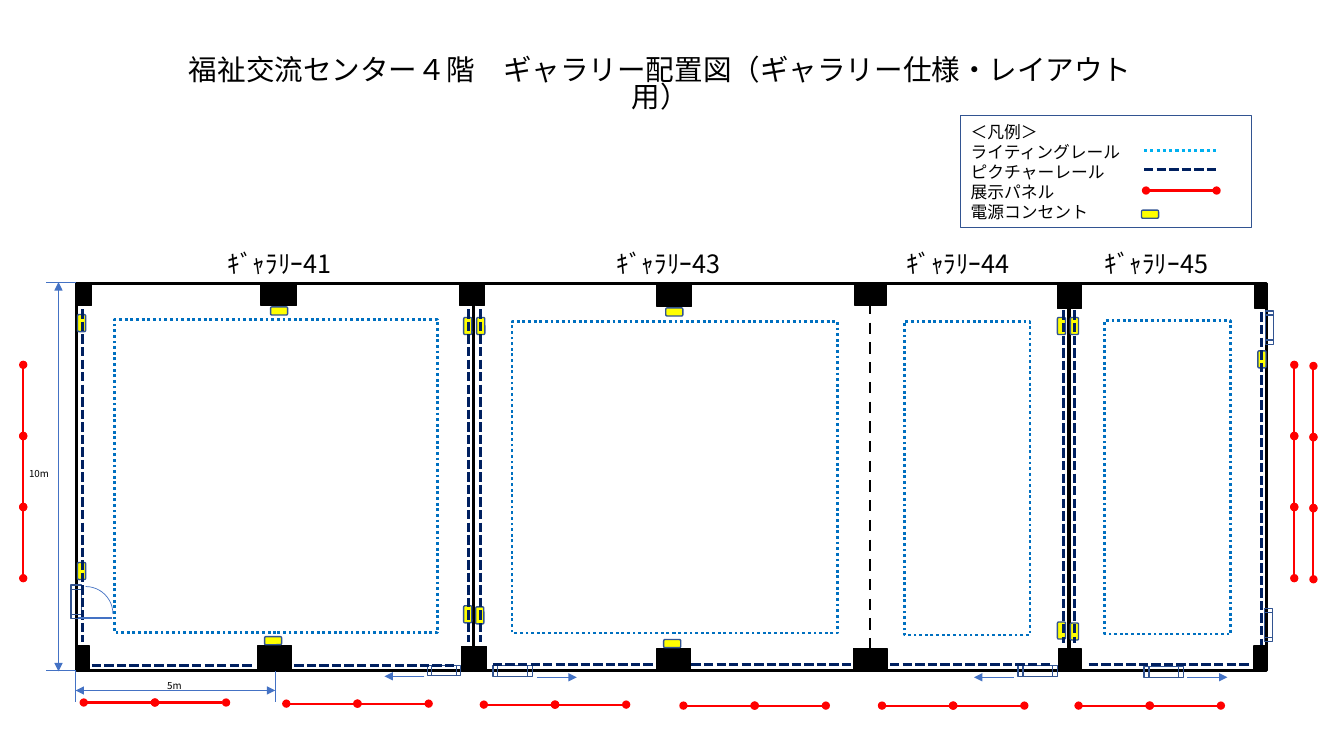
from lxml import etree
from pptx import Presentation
from pptx.dml.color import RGBColor
from pptx.enum.dml import MSO_LINE
from pptx.enum.shapes import MSO_CONNECTOR, MSO_SHAPE
from pptx.enum.text import MSO_ANCHOR, PP_ALIGN
from pptx.oxml.ns import qn
from pptx.util import Pt

RECTANGLE, ROUNDED = MSO_SHAPE.RECTANGLE, MSO_SHAPE.ROUNDED_RECTANGLE
WINDOW, ARC = MSO_SHAPE.FLOWCHART_PREDEFINED_PROCESS, MSO_SHAPE.ARC
STRAIGHT = MSO_CONNECTOR.STRAIGHT
DASH, SHORT_DASH, DOTS = MSO_LINE.DASH, MSO_LINE.SQUARE_DOT, MSO_LINE.ROUND_DOT
LEFT, CENTER = PP_ALIGN.LEFT, PP_ALIGN.CENTER
TOP, MIDDLE = MSO_ANCHOR.TOP, MSO_ANCHOR.MIDDLE

FONT = "Noto Sans CJK JP"
BLACK, WHITE, YELLOW, RED = "000000", "FFFFFF", "FFFF00", "FF0000"
OUTLINE, DIMENSION, NAVY = "325491", "4472C4", "002060"
ZONE_BLUE, LEGEND_BLUE = "0070C0", "00B0F0"

ROOM_TOP, ROOM_HEIGHT = 202.3, 276.5
ROOM_BOTTOM = ROOM_TOP + ROOM_HEIGHT
PILLAR_TOP = 203
OUTLET_LONG, OUTLET_SHORT = 12.2, 5.8
PANEL_LENGTH, PANEL_STEP = 51, 50.7
RAIL_ACROSS, RAIL_DOWN = 115.6, 237.6
SLIDE_ARROW = 28.5

# Room left, width
ROOMS = [(54.7, 283.7), (338.4, 425.5), (763.2, 141.8)]
ROOM_LABELS = [(155.5, "ｷﾞｬﾗﾘｰ41"), (433.4, "ｷﾞｬﾗﾘｰ43"),
               (640.1, "ｷﾞｬﾗﾘｰ44"), (781.9, "ｷﾞｬﾗﾘｰ45")]
# Lighting rail left, top, width, height
LIGHTING = [(82.1, 228.2, 230.4, 223.9), (365.8, 229.7, 232.6, 222.5),
            (645.8, 229.7, 90, 223.9), (789.1, 229, 90, 223.9)]
# Pillar left, width, height
TOP_PILLARS = [(55.4, 10.1, 15.1), (186.5, 25.2, 15.1), (328.3, 10.1, 15.1),
               (339.8, 6.5, 15.1), (469.4, 24.5, 15.8), (610.6, 22.3, 15.1),
               (755.3, 7.2, 17.3), (763.9, 8.6, 17.3), (896.4, 8.6, 17.3)]
BOTTOM_PILLARS = [(55.4, 8.6, 17.3), (184.3, 23.8, 17.6), (329.8, 8.6, 17),
                  (339.1, 8.6, 17), (469.4, 23.8, 15.8), (609.8, 23.8, 15.5),
                  (756, 5.8, 15.1), (761, 11.5, 15.1), (895.7, 8.6, 17.3)]
# Outlet centres
UPRIGHT_OUTLETS = [(58.3, 230.8), (58.3, 407.9), (334.1, 232.9), (334.1, 438.8),
                   (343.4, 232.9), (342.7, 439.6), (758.2, 232.9), (758.2, 450.4),
                   (767.5, 232.9), (767.5, 451.1), (901.4, 256.7)]
FLAT_OUTLETS = [(199.4, 222.1), (195.1, 457.6), (481.7, 222.8), (480.2, 459.7),
                (821.5, 153)]
# Picture rail starts
RAILS_ACROSS = [(65.5, 475.2), (210.2, 475.2), (352.1, 474.8), (493.9, 474.8),
                (635.8, 474.8), (777.6, 474.8)]
RAILS_DOWN = [(59, 221), (334.8, 221), (343.4, 221), (759.6, 221.8),
              (767.5, 221.8), (901.4, 223.2)]
# Display panel starts
PANELS_ACROSS = [(59.8, 501.8), (204.5, 502.6), (345.6, 503.3), (488.2, 504),
                 (630, 504), (770.4, 504)]
PANELS_DOWN = [(16.6, 260.6), (924.5, 260.6), (938.2, 261.4)]
# Window left, top, width, height, rotation
WINDOWS = [(305.3, 475.2, 23.8, 7.2, 0), (352.1, 475.2, 28.1, 7.9, 0),
           (727.2, 475.2, 28.1, 7.9, 0), (817.2, 475.9, 28.1, 7.9, 180),
           (42.5, 426.2, 23.8, 7.2, 90), (894.2, 443.5, 23.8, 5.8, 90),
           (895, 231.1, 23.8, 5.8, 90)]
# Sliding arrow start, height, direction
SLIDE_ARROWS = [(303.1, 483.1, -1), (383.5, 483.8, 1), (724.3, 483.8, -1),
                (848.2, 483.8, 1)]
LEGEND = ["＜凡例＞", "ライティングレール", "ピクチャーレール", "展示パネル", "電源コンセント"]


def color(value):
    return RGBColor.from_string(value)


def add_block(slide, kind, left, top, width, height, line, weight, fill=None, dash=None):
    shape = slide.shapes.add_shape(kind, Pt(left), Pt(top), Pt(width), Pt(height))
    shape.shadow.inherit = False
    if fill:
        shape.fill.solid()
        shape.fill.fore_color.rgb = color(fill)
    else:
        shape.fill.background()
    style_line(shape.line, line, weight, dash)
    return shape


def style_line(line, value, weight, dash):
    line.color.rgb = color(value)
    line.width = Pt(weight)
    if dash:
        line.dash_style = dash


def add_line(slide, x1, y1, x2, y2, value, weight, dash=None, head=None, tail=None):
    connector = slide.shapes.add_connector(STRAIGHT, Pt(x1), Pt(y1), Pt(x2), Pt(y2))
    style_line(connector.line, value, weight, dash)
    properties = connector._element.spPr
    outline = properties.find(qn("a:ln"))
    for tag, end in (("a:headEnd", head), ("a:tailEnd", tail)):
        if end:
            etree.SubElement(outline, qn(tag), type=end)
    etree.SubElement(properties, qn("a:effectLst"))


def write_text(shape, lines, size, align=LEFT, anchor=TOP):
    frame = shape.text_frame
    frame.word_wrap = True
    frame.vertical_anchor = anchor
    frame.text = "\n".join(lines)
    for paragraph in frame.paragraphs:
        paragraph.alignment = align
        font = paragraph.font
        font.size, font.name = Pt(size), FONT
        font.color.rgb = color(BLACK)
        defaults = paragraph._p.get_or_add_pPr().get_or_add_defRPr()
        etree.SubElement(defaults, qn("a:ea"), typeface=FONT)
    return frame.paragraphs[0]


def add_label(slide, left, top, width, height, text, size, align=LEFT):
    box = slide.shapes.add_textbox(Pt(left), Pt(top), Pt(width), Pt(height))
    return write_text(box, [text], size, align)


def add_outlet(slide, x, y, width, height):
    add_block(slide, ROUNDED, x - width / 2, y - height / 2, width, height,
              OUTLINE, 1, YELLOW)


def add_panels(slide, x, y, count, across, down):
    for index in range(count):
        left, top = x + index * PANEL_STEP * across, y + index * PANEL_STEP * down
        add_line(slide, left, top, left + PANEL_LENGTH * across,
                 top + PANEL_LENGTH * down, RED, 1.5, head="oval", tail="oval")


def add_dimension(slide, x1, y1, x2, y2, ends=None):
    add_line(slide, x1, y1, x2, y2, DIMENSION, 0.5, head=ends, tail=ends)


def add_legend(slide):
    box = add_block(slide, RECTANGLE, 686.2, 82.8, 207.4, 79.9, OUTLINE, 0.75)
    write_text(box, LEGEND, 12, anchor=MIDDLE)
    add_line(slide, 817.2, 107.3, 869, 107.3, LEGEND_BLUE, 2.25, DOTS)
    add_line(slide, 817.2, 121, 869, 121, NAVY, 2.25, SHORT_DASH)
    add_line(slide, 818.6, 136.1, 869, 136.1, RED, 1.5, head="oval", tail="oval")


def main():
    presentation = Presentation()
    presentation.slide_width, presentation.slide_height = Pt(960), Pt(540)
    slide = presentation.slides.add_slide(presentation.slide_layouts[6])

    # Title
    title = add_label(slide, 111.6, 38.2, 720, 32.4,
                      "福祉交流センター４階　ギャラリー配置図（ギャラリー仕様・レイアウト用）", 20.4, CENTER)
    title.line_spacing, title.space_before = 0.8, Pt(10)

    # Rooms and lighting rails
    for zone in LIGHTING:
        add_block(slide, RECTANGLE, *zone, ZONE_BLUE, 2, WHITE, DOTS)
    for left, width in ROOMS:
        add_block(slide, RECTANGLE, left, ROOM_TOP, width, ROOM_HEIGHT, BLACK, 2)
    add_line(slide, 621.4, ROOM_TOP, 621.4, ROOM_BOTTOM, BLACK, 2, DASH)
    for left, text in ROOM_LABELS:
        add_label(slide, left, 173.5, 104.4, 28.8, text, 18)

    # Pillars and windows
    for left, width, height in TOP_PILLARS:
        add_block(slide, RECTANGLE, left, PILLAR_TOP, width, height, BLACK, 1, BLACK)
    for left, width, height in BOTTOM_PILLARS:
        add_block(slide, RECTANGLE, left, ROOM_BOTTOM - height, width, height,
                  BLACK, 1, BLACK)
    for left, top, width, height, rotation in WINDOWS:
        window = add_block(slide, WINDOW, left, top, width, height, OUTLINE, 1)
        window.rotation = rotation

    # Legend, outlets and picture rails
    add_legend(slide)
    for x, y in UPRIGHT_OUTLETS:
        add_outlet(slide, x, y, OUTLET_SHORT, OUTLET_LONG)
    for x, y in FLAT_OUTLETS:
        add_outlet(slide, x, y, OUTLET_LONG, OUTLET_SHORT)
    for x, y in RAILS_ACROSS:
        add_line(slide, x, y, x + RAIL_ACROSS, y, NAVY, 2.25, SHORT_DASH)
    for x, y in RAILS_DOWN:
        add_line(slide, x, y, x, y + RAIL_DOWN, NAVY, 2.25, SHORT_DASH)

    # Display panels
    for x, y in PANELS_ACROSS:
        add_panels(slide, x, y, 2, 1, 0)
    for x, y in PANELS_DOWN:
        add_panels(slide, x, y, 3, 0, 1)

    # Doors
    for x, y, direction in SLIDE_ARROWS:
        add_line(slide, x, y, x + SLIDE_ARROW * direction, y, DIMENSION, 0.5,
                 tail="triangle")
    add_line(slide, 55.4, 441.4, 79.9, 441.4, DIMENSION, 1.5)
    add_block(slide, ARC, 41.8, 419, 38.9, 38.9, DIMENSION, 0.5)

    # Dimensions
    for y in (201.6, 478.8):
        add_dimension(slide, 33.1, y, 54, y)
    for x in (54, 196.6):
        add_dimension(slide, x, 479.5, x, 501.1)
    add_dimension(slide, 41.8, 201.6, 41.8, 479.5, "triangle")
    add_dimension(slide, 54, 493.2, 196.6, 493.2, "triangle")
    add_label(slide, 13.7, 330.5, 33.8, 15.8, "10m", 7)
    add_label(slide, 112.3, 481.7, 33.8, 15.8, "5m", 7)

    presentation.save("out.pptx")


if __name__ == "__main__":
    main()
